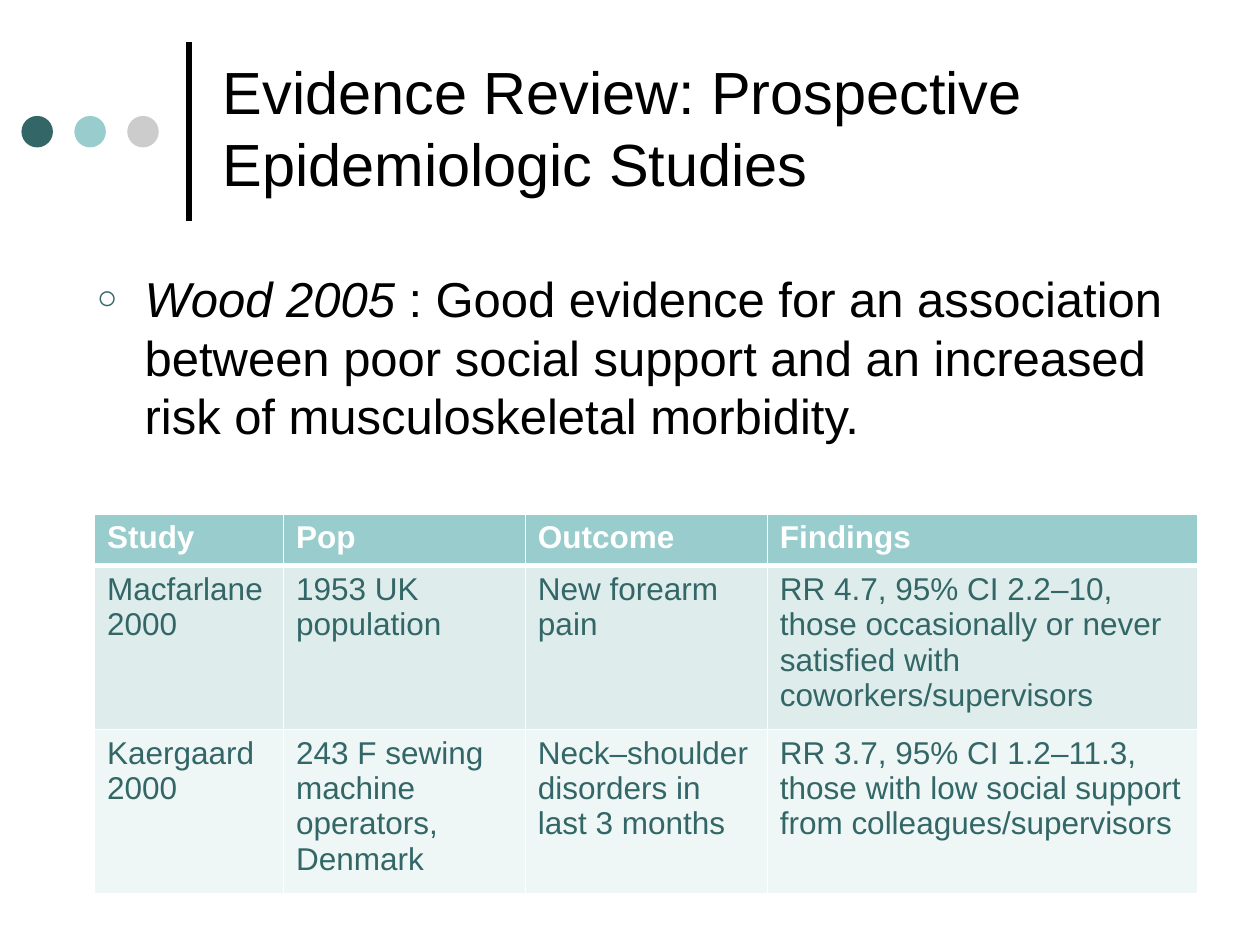
import pptx
import pptx.dml.color
import pptx.enum.shapes
import pptx.enum.text
import pptx.oxml.ns
import pptx.util
from lxml import etree

Inches = pptx.util.Inches
Pt = pptx.util.Pt
RGB = pptx.dml.color.RGBColor.from_string
qn = pptx.oxml.ns.qn

THEME = {
    "font": "Arial",
    "black": "000000", "white": "FFFFFF",
    "dark": "336666", "teal": "99CCCC", "grey": "CCCCCC",
    "row_fills": ["99CCCC", "DEECEC", "EFF6F6"],
    "title": 34, "body": 28, "table": 18,
}


def add_run(paragraph, text, size, color, **extra):
    run = paragraph.add_run()
    run.text = text
    formats = {"name": THEME["font"], "size": Pt(size), **extra}
    for attribute, value in formats.items():
        setattr(run.font, attribute, value)
    run.font.color.rgb = RGB(THEME[color])


def add_border(cell, side, width):
    line = etree.SubElement(cell._tc.get_or_add_tcPr(), qn(f"a:ln{side}"), w=str(Pt(width)))
    fill = etree.SubElement(line, qn("a:solidFill"))
    etree.SubElement(fill, qn("a:srgbClr"), val=THEME["white"])


presentation = pptx.Presentation()
presentation.slide_width, presentation.slide_height = Inches(10), Inches(7.5)
slide = presentation.slides.add_slide(presentation.slide_layouts[6])

# Vertical rule beside the title
rule = slide.shapes.add_connector(
    pptx.enum.shapes.MSO_CONNECTOR.STRAIGHT,
    Inches(1.5), Inches(1.75), Inches(1.5), Inches(0.33))
rule.line.color.rgb = RGB(THEME["black"])
rule.line.width = Pt(3)
etree.SubElement(rule._element.spPr, qn("a:effectLst"))

# Three dots
for index, color in enumerate(["dark", "teal", "grey"]):
    dot = slide.shapes.add_shape(
        pptx.enum.shapes.MSO_SHAPE.OVAL,
        Inches(0.17 + 0.42 * index), Inches(0.92), Inches(0.25), Inches(0.25))
    dot.shadow.inherit = False
    dot.fill.solid()
    dot.fill.fore_color.rgb = RGB(THEME[color])
    dot.line.fill.background()

# Title
title = slide.shapes.add_textbox(Inches(1.67), Inches(0.17), Inches(7.67), Inches(1.67))
title.text_frame.word_wrap = True
title.text_frame.vertical_anchor = pptx.enum.text.MSO_ANCHOR.MIDDLE
add_run(title.text_frame.paragraphs[0], "Evidence Review: Prospective Epidemiologic Studies",
        THEME["title"], "black")

# Studies table
rows = [
    ["Study", "Pop", "Outcome", "Findings"],
    ["Macfarlane 2000", "1953 UK population", "New forearm pain",
     "RR 4.7, 95% CI 2.2–10, those occasionally or never\nsatisfied with coworkers/supervisors"],
    ["Kaergaard 2000", "243 F sewing\nmachine operators, Denmark",
     "Neck–shoulder\ndisorders in last 3 months",
     "RR 3.7, 95% CI 1.2–11.3, those with low social support from colleagues/supervisors"],
]
table = slide.shapes.add_table(
    3, 4, Inches(0.75), Inches(4.08), Inches(8.75), Inches(3.01)).table
for column, width in zip(table.columns, [1.5, 1.92, 1.92, 3.42]):
    column.width = Inches(width)
for row, height in zip(table.rows, [0.41, 1.3, 1.3]):
    row.height = Inches(height)

for row_index, texts in enumerate(rows):
    header = row_index == 0
    borders = {"L": 1, "R": 1, "T": 3 if row_index == 1 else 1, "B": 3 if header else 1}
    for column_index, text in enumerate(texts):
        cell = table.cell(row_index, column_index)
        for side, width in borders.items():
            add_border(cell, side, width)
        cell.fill.solid()
        cell.fill.fore_color.rgb = RGB(THEME["row_fills"][row_index])
        for line_index, line_text in enumerate(text.split("\n")):
            frame = cell.text_frame
            paragraph = frame.add_paragraph() if line_index else frame.paragraphs[0]
            add_run(paragraph, line_text, THEME["table"],
                    "white" if header else "dark", bold=header)

# Bulleted statement
body = slide.shapes.add_textbox(Inches(0.67), Inches(2.08), Inches(8.83), Inches(1.75))
body.text_frame.word_wrap = True
paragraph = body.text_frame.paragraphs[0]
properties = paragraph._p.get_or_add_pPr()
properties.set("marL", str(Inches(0.38)))
properties.set("indent", str(Inches(-0.38)))
spacing = etree.SubElement(properties, qn("a:spcBef"))
etree.SubElement(spacing, qn("a:spcPct"), val="20000")
bullet_color = etree.SubElement(properties, qn("a:buClr"))
etree.SubElement(bullet_color, qn("a:srgbClr"), val=THEME["dark"])
etree.SubElement(properties, qn("a:buSzPct"), val="70000")
etree.SubElement(properties, qn("a:buFont"), typeface=THEME["font"])
etree.SubElement(properties, qn("a:buChar"), char="○")
add_run(paragraph, "Wood 2005 ", THEME["body"], "black", italic=True)
add_run(paragraph, ": Good evidence for an association between poor social support "
        "and an increased risk of musculoskeletal morbidity.", THEME["body"], "black")

presentation.save("out.pptx")
